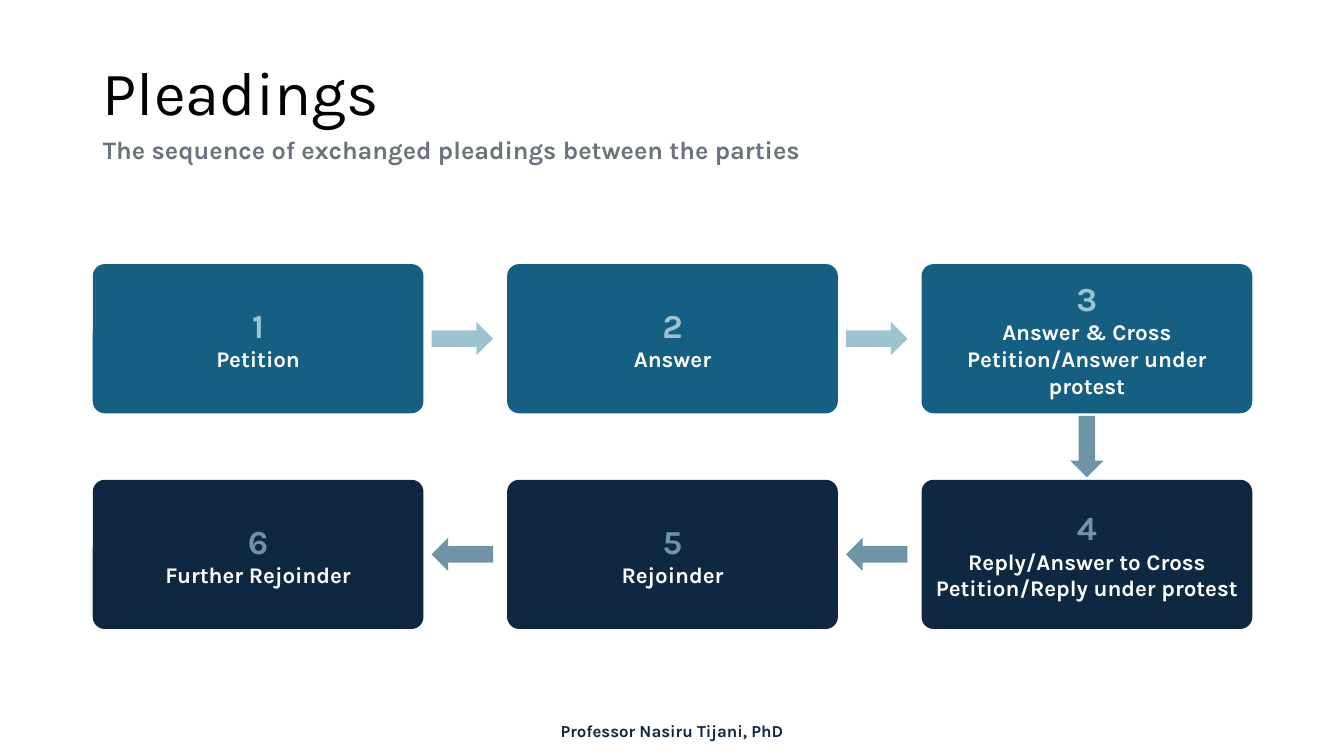
from pptx import Presentation
from pptx.dml.color import RGBColor
from pptx.enum.shapes import MSO_SHAPE as SHAPE
from pptx.enum.text import MSO_ANCHOR as ANCHOR, MSO_AUTO_SIZE as AUTO_SIZE, PP_ALIGN as ALIGN
from pptx.util import Inches, Pt

FONT = "Karla"
LEFT, TOP = 0.92, 2.62
BOX_WIDTH, BOX_HEIGHT = 3.28, 1.48
COLUMN_STEP, ROW_STEP = 4.11, 2.14
ARROW_LENGTH, ARROW_WIDTH = 0.61, 0.33
ARROW_OFFSET = BOX_WIDTH + 0.08


def add_filled(kind, left, top, width, height, color):
    shape = slide.shapes.add_shape(kind, Inches(left), Inches(top), Inches(width), Inches(height))
    shape.shadow.inherit = False
    shape.fill.solid()
    shape.fill.fore_color.rgb = RGBColor.from_string(color)
    shape.line.fill.background()
    return shape


def format_paragraph(paragraph, size, color, bold=True, align=ALIGN.CENTER):
    paragraph.alignment = align
    for run in paragraph.runs:
        run.font.name = FONT
        run.font.size = Pt(size)
        run.font.bold = bold
        run.font.color.rgb = RGBColor.from_string(color)


presentation = Presentation()
presentation.slide_width, presentation.slide_height = Inches(13.33), Inches(7.5)
slide = presentation.slides.add_slide(presentation.slide_layouts[5])

# Title and subtitle
title = slide.shapes.title
title.left, title.top, title.width, title.height = map(Inches, (LEFT, 0.4, 11.5, 1.45))
title_frame = title.text_frame
title_frame.text = "Pleadings\nThe sequence of exchanged pleadings between the parties"
title_frame.auto_size = AUTO_SIZE.NONE
title_frame.vertical_anchor = ANCHOR.MIDDLE
heading, subtitle = title_frame.paragraphs
format_paragraph(heading, 44, "000000", bold=False, align=ALIGN.LEFT)
format_paragraph(subtitle, 18, "6B7280", align=ALIGN.LEFT)
heading.line_spacing = subtitle.line_spacing = 0.9
heading.space_before, subtitle.space_before = Pt(0), Pt(6)

# Steps: the first row runs to the right, the second back to the left
steps = [
    "Petition",
    "Answer",
    "Answer & Cross Petition/Answer under protest",
    "Reply/Answer to Cross Petition/Reply under protest",
    "Rejoinder",
    "Further Rejoinder",
]
row_styles = [("156082", "9DC3D0"), ("0E2841", "6E94A6")]
for index, step in enumerate(steps):
    row, column = divmod(index, 3)
    if row == 1:
        column = 2 - column
    fill_color, number_color = row_styles[row]
    box = add_filled(SHAPE.ROUNDED_RECTANGLE, LEFT + column * COLUMN_STEP, TOP + row * ROW_STEP,
                     BOX_WIDTH, BOX_HEIGHT, fill_color)
    box.adjustments[0] = 0.08
    box.text_frame.text = f"{index + 1}\n{step}"
    box.text_frame.word_wrap = True
    box.text_frame.vertical_anchor = ANCHOR.MIDDLE
    number, label = box.text_frame.paragraphs
    format_paragraph(number, 24, number_color)
    format_paragraph(label, 16, "FFFFFF")

# Arrows between the steps
for row, kind in enumerate([SHAPE.RIGHT_ARROW, SHAPE.LEFT_ARROW]):
    arrow_top = TOP + row * ROW_STEP + (BOX_HEIGHT - ARROW_WIDTH) / 2
    for column in range(2):
        add_filled(kind, LEFT + column * COLUMN_STEP + ARROW_OFFSET, arrow_top,
                   ARROW_LENGTH, ARROW_WIDTH, row_styles[row][1])
add_filled(SHAPE.DOWN_ARROW, LEFT + 2 * COLUMN_STEP + (BOX_WIDTH - ARROW_WIDTH) / 2,
           TOP + (BOX_HEIGHT + ROW_STEP - ARROW_LENGTH) / 2,
           ARROW_WIDTH, ARROW_LENGTH, row_styles[1][1])

# Author line
author = slide.shapes.add_textbox(0, Inches(7.09), presentation.slide_width, Inches(0.33))
author.text_frame.text = "Professor Nasiru Tijani, PhD"
author.text_frame.word_wrap = True
author.text_frame.vertical_anchor = ANCHOR.MIDDLE
format_paragraph(author.text_frame.paragraphs[0], 12, "0E2841")

presentation.save("out.pptx")
